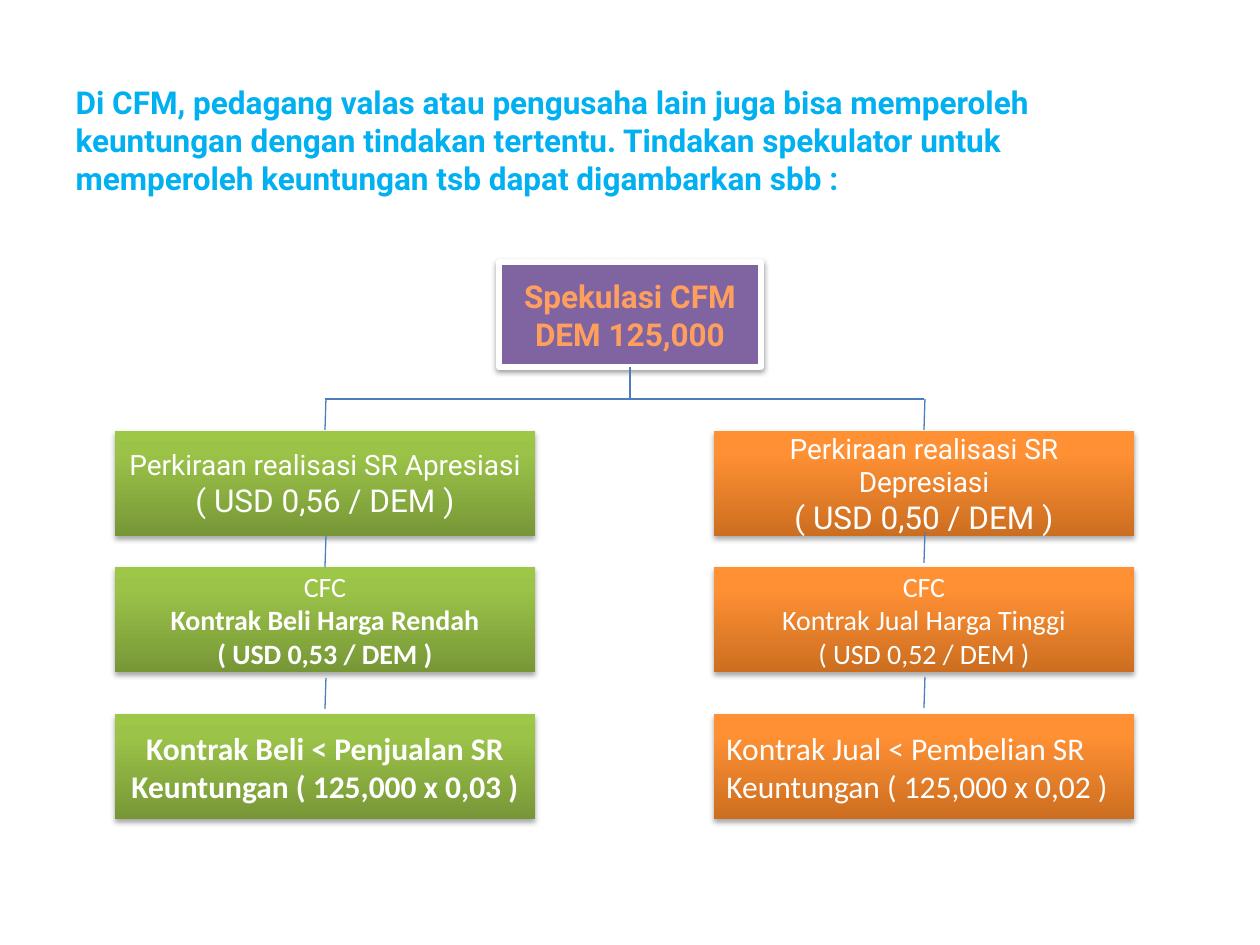
"""Build the slide on speculation in the currency futures market."""
from dataclasses import dataclass

from lxml.etree import SubElement
from pptx import Presentation
from pptx.dml.color import RGBColor
from pptx.enum.shapes import MSO_CONNECTOR, MSO_SHAPE
from pptx.enum.text import MSO_ANCHOR, MSO_AUTO_SIZE, PP_ALIGN
from pptx.oxml.ns import qn
from pptx.util import Emu, Pt

PX_PER_INCH = 126


def px(length):
    """Turn whole pixels into EMU."""
    return Emu(round(length * 914400 / PX_PER_INCH))


@dataclass(frozen=True)
class Theme:
    """Colours, fonts and type sizes of the slide."""
    heading: str = "00B0F0"
    white: str = "FFFFFF"
    purple: str = "8064A2"
    connector: str = "4B7EBC"
    peach: tuple = ((0, "FFA367"), (25, "FF9F5D"), (50, "F38E3A"), (75, "FF9F5D"), (100, "FFA367"))
    green: tuple = ((0, "779737"), (80, "9BC348"), (100, "9DC746"))
    orange: tuple = ((0, "CC6E20"), (80, "FF9034"), (100, "FF9136"))
    display: str = "Roboto"
    body: str = "Calibri"
    large: int = 18
    small: int = 16


@dataclass(frozen=True)
class Line:
    """One line of text in a box."""
    text: str
    size: int
    font: str
    bold: bool = False


class SlideBuilder:
    """Hold the theme and the current slide."""

    def __init__(self, slide, theme):
        """Keep the slide and its theme."""
        self.slide = slide
        self.theme = theme

    def paint(self, fill, properties, colour, angle):
        """Fill with one colour, or with gradient stops at an angle."""
        if isinstance(colour, str):
            fill.solid()
            fill.fore_color.rgb = RGBColor.from_string(colour)
            return
        fill.gradient()
        fill.gradient_angle = angle
        stops = properties.find(".//" + qn("a:gsLst"))
        for stop in list(stops):
            stops.remove(stop)
        for position, value in colour:
            stop = SubElement(stops, qn("a:gs"), pos=str(position * 1000))
            SubElement(stop, qn("a:srgbClr"), val=value)

    def style(self, paragraph, line, colour, align):
        """Format a paragraph and its run."""
        paragraph.alignment = align
        for run in paragraph.runs:
            run.font.size = Pt(line.size)
            run.font.name = line.font
            run.font.bold = line.bold
            self.paint(run.font.fill, run.font._element, colour, 270)

    def title(self, text, left, top, width, height):
        """Place the title."""
        title = self.slide.shapes.title
        title.left, title.top, title.width, title.height = map(px, (left, top, width, height))
        frame = title.text_frame
        frame.text = text
        frame.word_wrap = True
        frame.auto_size = MSO_AUTO_SIZE.NONE
        frame.vertical_anchor = MSO_ANCHOR.TOP
        line = Line(text, self.theme.large, self.theme.display, True)
        self.style(frame.paragraphs[0], line, self.theme.heading, PP_ALIGN.LEFT)

    def shadow(self, shape, alpha, distance):
        """Drop a soft shadow straight down."""
        shape.shadow.inherit = False
        effects = shape._element.spPr.find(qn("a:effectLst"))
        outer = SubElement(effects, qn("a:outerShdw"), blurRad="40000", dist=str(distance),
                           dir="5400000", rotWithShape="0")
        black = SubElement(outer, qn("a:srgbClr"), val="000000")
        SubElement(black, qn("a:alpha"), val=str(alpha * 1000))

    def box(self, left, top, width, height, fill, lines, colour,
            align=PP_ALIGN.CENTER, outline=None):
        """Add a shadowed rectangle with lines of text."""
        box = self.slide.shapes.add_shape(
            MSO_SHAPE.RECTANGLE, *map(px, (left, top, width, height)))
        self.paint(box.fill, box._element.spPr, fill, 90)
        if outline:
            box.line.color.rgb = RGBColor.from_string(outline)
            box.line.width = Pt(3)
            self.shadow(box, 38, 20000)
        else:
            box.line.fill.background()
            self.shadow(box, 35, 23000)
        frame = box.text_frame
        frame.word_wrap = True
        frame.vertical_anchor = MSO_ANCHOR.MIDDLE
        frame.text = "\n".join(line.text for line in lines)
        for paragraph, line in zip(frame.paragraphs, lines):
            self.style(paragraph, line, colour, align)

    def connector(self, x1, y1, x2, y2):
        """Add a thin straight connector."""
        link = self.slide.shapes.add_connector(
            MSO_CONNECTOR.STRAIGHT, *map(px, (x1, y1, x2, y2)))
        link.line.color.rgb = RGBColor.from_string(self.theme.connector)
        link.line.width = Pt(0.75)
        SubElement(link._element.spPr, qn("a:effectLst"))


def main():
    """Build and save the slide."""
    theme = Theme()
    deck = Presentation()
    deck.slide_width, deck.slide_height = px(1260), px(945)
    builder = SlideBuilder(deck.slides.add_slide(deck.slide_layouts[5]), theme)

    builder.title(
        "Di CFM, pedagang valas atau pengusaha lain juga bisa memperoleh keuntungan dengan "
        "tindakan tertentu. Tindakan spekulator untuk memperoleh keuntungan tsb dapat "
        "digambarkan sbb :", 63, 77, 1134, 130)

    speculation = [Line(text, theme.large, theme.display, True)
                   for text in ("Spekulasi CFM", "DEM 125,000")]
    builder.box(499, 262, 262, 105, theme.purple, speculation, theme.peach, outline=theme.white)

    box_width, box_height = 420, 105
    row_tops = (431, 567, 714)
    bus_y = 399
    appreciation_left, depreciation_left = 115, 714
    half = box_width // 2
    builder.connector(630, 367, 630, bus_y)
    builder.connector(appreciation_left + half, bus_y, depreciation_left + half, bus_y)

    branches = (
        (appreciation_left, theme.green, "Apresiasi", "0,56", "Beli Harga Rendah", "0,53",
         "Beli < Penjualan", "0,03", True, PP_ALIGN.CENTER, (536, 678)),
        (depreciation_left, theme.orange, "Depresiasi", "0,50", "Jual Harga Tinggi", "0,52",
         "Jual < Pembelian", "0,02", False, PP_ALIGN.LEFT, (532, 677)),
    )
    for (left, fill, trend, spot, contract, price, trade, gain, bold, result_align,
         link_tops) in branches:
        expectation = [Line(f"Perkiraan realisasi SR {trend}", theme.small, theme.display),
                       Line(f"( USD {spot} / DEM )", theme.large, theme.display)]
        order = [Line("CFC", theme.small, theme.body),
                 Line(f"Kontrak {contract}", theme.small, theme.body, bold),
                 Line(f"( USD {price} / DEM )", theme.small, theme.body, bold)]
        result = [Line(f"Kontrak {trade} SR", theme.large, theme.body, bold),
                  Line(f"Keuntungan ( 125,000 x {gain} )", theme.large, theme.body, bold)]
        aligns = (PP_ALIGN.CENTER, PP_ALIGN.CENTER, result_align)
        for top, lines, align in zip(row_tops, (expectation, order, result), aligns):
            builder.box(left, top, box_width, box_height, fill, lines, theme.white, align)
        for link_top in (bus_y, *link_tops):
            builder.connector(left + half, link_top + 31, left + half + 1, link_top)

    deck.save("out.pptx")


if __name__ == "__main__":
    main()
